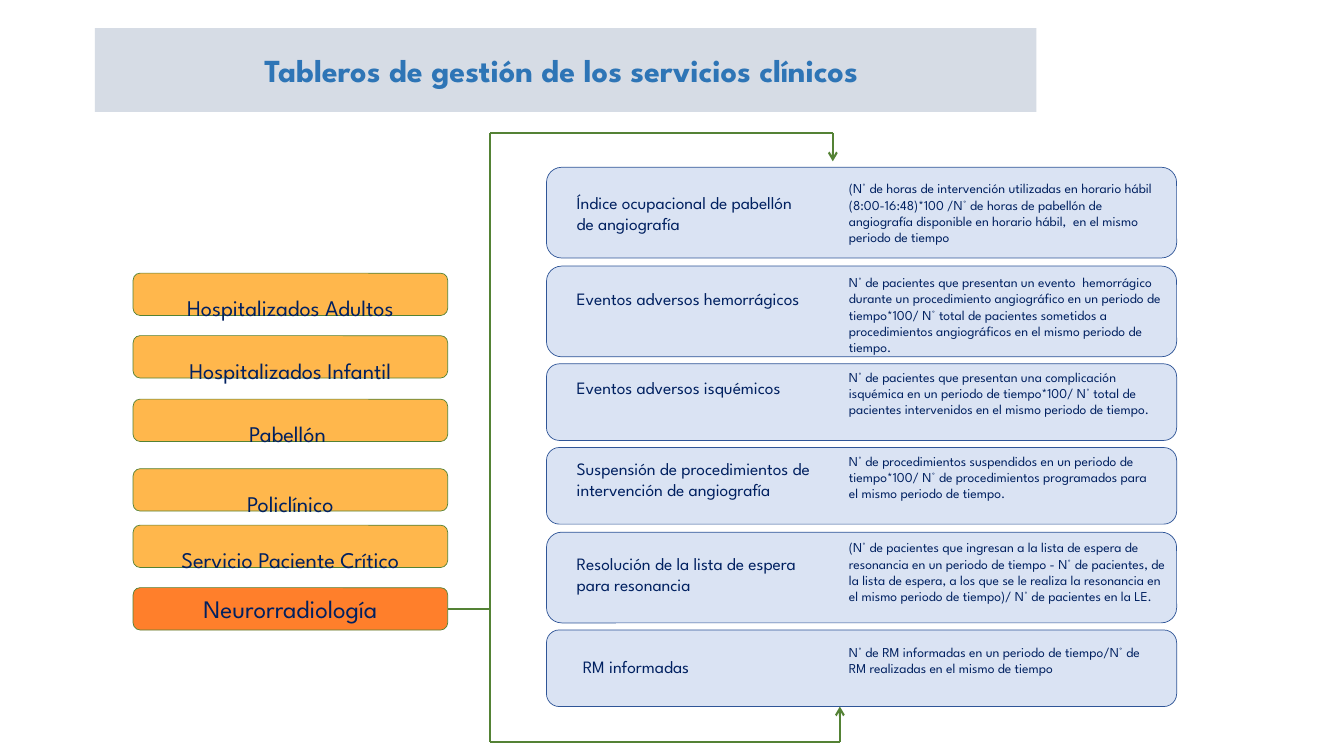
from typing import NamedTuple, Optional

from lxml import etree
from pptx import Presentation
from pptx.dml.color import RGBColor
from pptx.enum import shapes as sh, text as tx
from pptx.oxml import ns
from pptx.util import Inches, Pt

NAVY = RGBColor(0x00, 0x20, 0x60)
GREEN = RGBColor(0x54, 0x82, 0x35)
AMBER = RGBColor(0xFF, 0x99, 0x00)
ORANGE = RGBColor(0xFF, 0x66, 0x00)
PALE_BLUE = RGBColor(0xDA, 0xE3, 0xF3)
EDGE_BLUE = RGBColor(0x2F, 0x55, 0x97)
TITLE_BLUE = RGBColor(0x2E, 0x75, 0xB6)
TITLE_GREY = RGBColor(0xD6, 0xDC, 0xE5)
FONT = "League Spartan"

SERVICE_LEFT, SERVICE_WIDTH, SERVICE_HEIGHT = 1.32, 3.12, 0.42
METRIC_LEFT, METRIC_WIDTH = 5.42, 6.25
FORMULA_LEFT = 8.33
TRUNK_X, TRUNK_TOP, TRUNK_BOTTOM = 4.86, 1.32, 7.36
SERVICE_Y = 6.04


class Service(NamedTuple):
    name: str
    top: float
    fill: RGBColor = AMBER
    opacity: int = 70
    size: float = 16
    spacing: float = 2.0


class Metric(NamedTuple):
    top: float
    height: float
    name: str
    name_top: float
    formula: str
    formula_top: float
    name_left: float = 5.63
    name_width: float = 2.5
    formula_width: float = 3.26


class Line(NamedTuple):
    start: tuple[float, float]
    end: tuple[float, float]
    arrow: bool = False


SERVICES = [
    Service("Hospitalizados Adultos", 2.71),
    Service("Hospitalizados Infantil", 3.33),
    Service("Pabellón ", 3.96),
    Service("Policlínico", 4.65),
    Service("Servicio Paciente Crítico", 5.21),
    Service("Neurorradiología", 5.83, ORANGE, 83, 18, 1.0),
]

METRICS = [
    Metric(1.66, 0.9, "Índice ocupacional de pabellón de angiografía", 1.86,
           "(N° de horas de intervención utilizadas en horario hábil "
           "(8:00-16:48)*100 /N° de horas de pabellón de angiografía "
           "disponible en horario hábil,  en el mismo periodo de tiempo", 1.74),
    Metric(2.64, 0.9, "Eventos adversos hemorrágicos", 2.81,
           "N° de pacientes que presentan un evento  hemorrágico durante un "
           "procedimiento angiográfico en un periodo de tiempo*100/ N° total de "
           "pacientes sometidos a procedimientos angiográficos en el mismo "
           "periodo de tiempo.", 2.67, name_width=2.64, formula_width=3.33),
    Metric(3.61, 0.76, "Eventos adversos isquémicos", 3.69,
           "N° de pacientes que presentan una complicación isquémica en un "
           "periodo de tiempo*100/ N° total de pacientes intervenidos en el "
           "mismo periodo de tiempo.", 3.61, name_width=2.57),
    Metric(4.44, 0.76, "Suspensión de procedimientos de intervención de angiografía", 4.5,
           "N° de procedimientos suspendidos en un periodo de tiempo*100/ N° de "
           "procedimientos programados para el mismo periodo de tiempo.", 4.44,
           name_width=2.57),
    Metric(5.28, 0.9, "Resolución de la lista de espera para resonancia", 5.44,
           "(N° de pacientes que ingresan a la lista de espera de resonancia en "
           "un periodo de tiempo - N° de pacientes, de la lista de espera, a los "
           "que se le realiza la resonancia en el mismo periodo de tiempo)/ N° de "
           "pacientes en la LE.", 5.3, formula_width=3.33),
    Metric(6.25, 0.76, "RM informadas", 6.46,
           "N° de RM informadas en un periodo de tiempo/N° de RM realizadas en "
           "el mismo de tiempo", 6.34, name_left=5.69),
]

BRANCH = Line((TRUNK_X, SERVICE_Y), (SERVICE_LEFT + SERVICE_WIDTH, SERVICE_Y))
BRACKET = [
    Line((TRUNK_X, TRUNK_TOP), (TRUNK_X, TRUNK_BOTTOM)),
    Line((8.33, TRUNK_BOTTOM), (8.33, 7.01), arrow=True),
    Line((8.26, TRUNK_TOP), (8.26, 1.6), arrow=True),
    Line((8.33, TRUNK_BOTTOM), (TRUNK_X, TRUNK_BOTTOM)),
    Line((8.26, TRUNK_TOP), (TRUNK_X, TRUNK_TOP)),
]


def write(shape, words: str, size: float, color: RGBColor = NAVY,
          align=tx.PP_ALIGN.LEFT, anchor=tx.MSO_ANCHOR.TOP,
          bold: bool = False, spacing: Optional[float] = None) -> None:
    frame = shape.text_frame
    frame.word_wrap = True
    frame.auto_size = tx.MSO_AUTO_SIZE.NONE
    frame.vertical_anchor = anchor
    frame.margin_left = frame.margin_right = Inches(0.09)
    frame.margin_top = frame.margin_bottom = Inches(0.05)
    paragraph = frame.paragraphs[0]
    paragraph.text = words
    paragraph.alignment = align
    if spacing:
        paragraph.line_spacing = spacing
    font = paragraph.font
    font.name, font.size, font.bold = FONT, Pt(size), bold
    font.color.rgb = color


def add_box(slide, left: float, top: float, width: float, height: float,
            fill: RGBColor, edge: RGBColor):
    box = slide.shapes.add_shape(sh.MSO_SHAPE.ROUNDED_RECTANGLE, Inches(left),
                                 Inches(top), Inches(width), Inches(height))
    box.shadow.inherit = False
    box.fill.solid()
    box.fill.fore_color.rgb = fill
    box.line.color.rgb = edge
    box.line.width = Pt(0.5)
    return box


def add_service(slide, service: Service):
    box = add_box(slide, SERVICE_LEFT, service.top, SERVICE_WIDTH,
                  SERVICE_HEIGHT, service.fill, GREEN)
    color = box.fill._xPr.find(ns.qn("a:solidFill"))[0]
    etree.SubElement(color, ns.qn("a:alpha"), val=str(service.opacity * 1000))
    write(box, service.name, service.size, align=tx.PP_ALIGN.CENTER,
          anchor=tx.MSO_ANCHOR.MIDDLE, spacing=service.spacing)
    return box


def add_label(slide, left: float, top: float, width: float, height: float,
              words: str, size: float) -> None:
    label = slide.shapes.add_textbox(Inches(left), Inches(top), Inches(width), Inches(height))
    write(label, words, size)


def add_metric(slide, metric: Metric) -> None:
    add_box(slide, METRIC_LEFT, metric.top, METRIC_WIDTH, metric.height, PALE_BLUE, EDGE_BLUE)
    add_label(slide, metric.name_left, metric.name_top, metric.name_width, 0.52,
              metric.name, 12.4)
    add_label(slide, FORMULA_LEFT, metric.formula_top, metric.formula_width, 0.75,
              metric.formula, 9.7)


def add_line(slide, line: Line):
    connector = slide.shapes.add_connector(
        sh.MSO_CONNECTOR.STRAIGHT, *map(Inches, line.start + line.end))
    connector.line.color.rgb = GREEN
    connector.line.width = Pt(1.5)
    if line.arrow:
        etree.SubElement(connector.line._get_or_add_ln(), ns.qn("a:tailEnd"), type="arrow")
    etree.SubElement(connector._element.spPr, ns.qn("a:effectLst"))
    return connector


def add_title(slide) -> None:
    title = slide.shapes.title
    title.left, title.top = Inches(0.94), Inches(0.28)
    title.width, title.height = Inches(9.34), Inches(0.83)
    title.fill.solid()
    title.fill.fore_color.rgb = TITLE_GREY
    write(title, "Tableros de gestión de los servicios clínicos ", 22.9, TITLE_BLUE,
          tx.PP_ALIGN.CENTER, tx.MSO_ANCHOR.MIDDLE, bold=True)


def main() -> None:
    presentation = Presentation()
    presentation.slide_width, presentation.slide_height = Inches(13.33), Inches(7.5)
    slide = presentation.slides.add_slide(presentation.slide_layouts[5])
    add_title(slide)
    service_boxes = [add_service(slide, service) for service in SERVICES]
    for metric in METRICS:
        add_metric(slide, metric)
    add_line(slide, BRANCH).end_connect(service_boxes[-1], 3)
    for line in BRACKET:
        add_line(slide, line)
    presentation.save("out.pptx")


if __name__ == "__main__":
    main()
